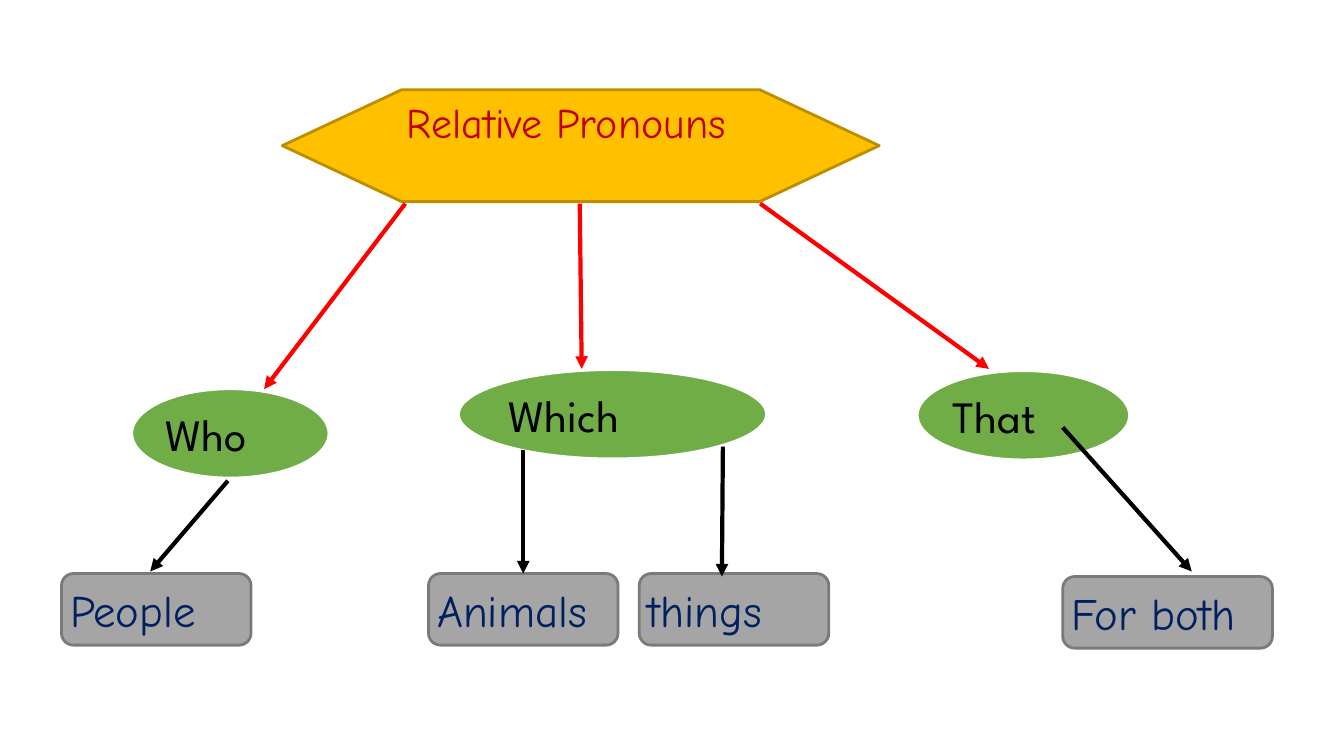
from lxml.etree import SubElement
from pptx import Presentation
from pptx.dml.color import RGBColor
from pptx.enum.shapes import MSO_CONNECTOR as Link, MSO_SHAPE as Kind
from pptx.enum.text import MSO_ANCHOR as Anchor, MSO_AUTO_SIZE as Fit, PP_ALIGN as Align
from pptx.oxml.ns import qn
from pptx.util import Emu, Pt

SCALE = 9144  # EMU in one px, at 100 px to the inch
PAD = 5
HAND, BLOCK = "Comic Neue", "League Spartan"
RED, BLACK = "FF0000", "000000"

WORDS = [
    ("Who", 130, 385, 197),
    ("Which", 454, 366, 307),
    ("That", 909, 367, 212),
]
USES = [
    ("People", 61, 569, 188),
    ("Animals", 425, 569, 188),
    ("things", 634, 569, 188),
    ("For both", 1054, 572, 208),
]
ARROWS = [
    (RED, 402, 202, 262, 386),
    (RED, 575, 202, 577, 366),
    (RED, 754, 202, 981, 366),
    (BLACK, 226, 477, 149, 567),
    (BLACK, 519, 446, 519, 569),
    (BLACK, 717, 443, 716, 572),
    (BLACK, 1054, 424, 1182, 567),
]


def px(num):
    return Emu(num * SCALE)


def paint(color, tone):
    color.rgb = RGBColor.from_string(tone)


def add_node(slide, kind, box, fill, edge, width, text, font, size, ink, foot=PAD):
    """Add a filled shape with one line of text; foot is its bottom inset."""
    node = slide.shapes.add_shape(kind, *map(px, box))
    node.shadow.inherit = False
    node.fill.solid()
    paint(node.fill.fore_color, fill)
    paint(node.line.color, edge)
    node.line.width = Pt(width)

    frame = node.text_frame
    frame.word_wrap = True
    frame.auto_size = Fit.SHAPE_TO_FIT_TEXT
    frame.vertical_anchor = Anchor.MIDDLE
    frame.margin_left = frame.margin_right = frame.margin_top = px(PAD)
    frame.margin_bottom = px(foot)

    para = frame.paragraphs[0]
    para.alignment = Align.LEFT
    run = para.add_run()
    run.text = text
    run.font.name = font
    run.font.size = Pt(size)
    paint(run.font.color, ink)


def add_title(slide, text):
    add_node(slide, Kind.FLOWCHART_PREPARATION, (280, 89, 592, 111),
             "FFC000", "BD8E00", 2, text, HAND, 30, "C00000", foot=53)


def add_word(slide, text, left, top, width):
    add_node(slide, Kind.OVAL, (left, top, width, 90),
             "70AD47", "FFFFFF", 3, text, BLOCK, 32, BLACK)


def add_use(slide, text, left, top, width):
    add_node(slide, Kind.ROUNDED_RECTANGLE, (left, top, width, 71),
             "A5A5A5", "7A7A7A", 2, text, HAND, 32, "002060")


def add_arrow(slide, tone, *ends):
    arrow = slide.shapes.add_connector(Link.STRAIGHT, *map(px, ends))
    paint(arrow.line.color, tone)
    arrow.line.width = Pt(3)
    SubElement(arrow.line._get_or_add_ln(), qn("a:tailEnd"), type="triangle")
    SubElement(arrow._element.spPr, qn("a:effectLst"))


def main():
    deck = Presentation()
    deck.slide_width, deck.slide_height = px(1333), px(750)
    slide = deck.slides.add_slide(deck.slide_layouts[6])
    add_title(slide, "Relative Pronouns")
    for word in WORDS:
        add_word(slide, *word)
    for use in USES:
        add_use(slide, *use)
    for arrow in ARROWS:
        add_arrow(slide, *arrow)
    deck.save("out.pptx")


if __name__ == "__main__":
    main()
